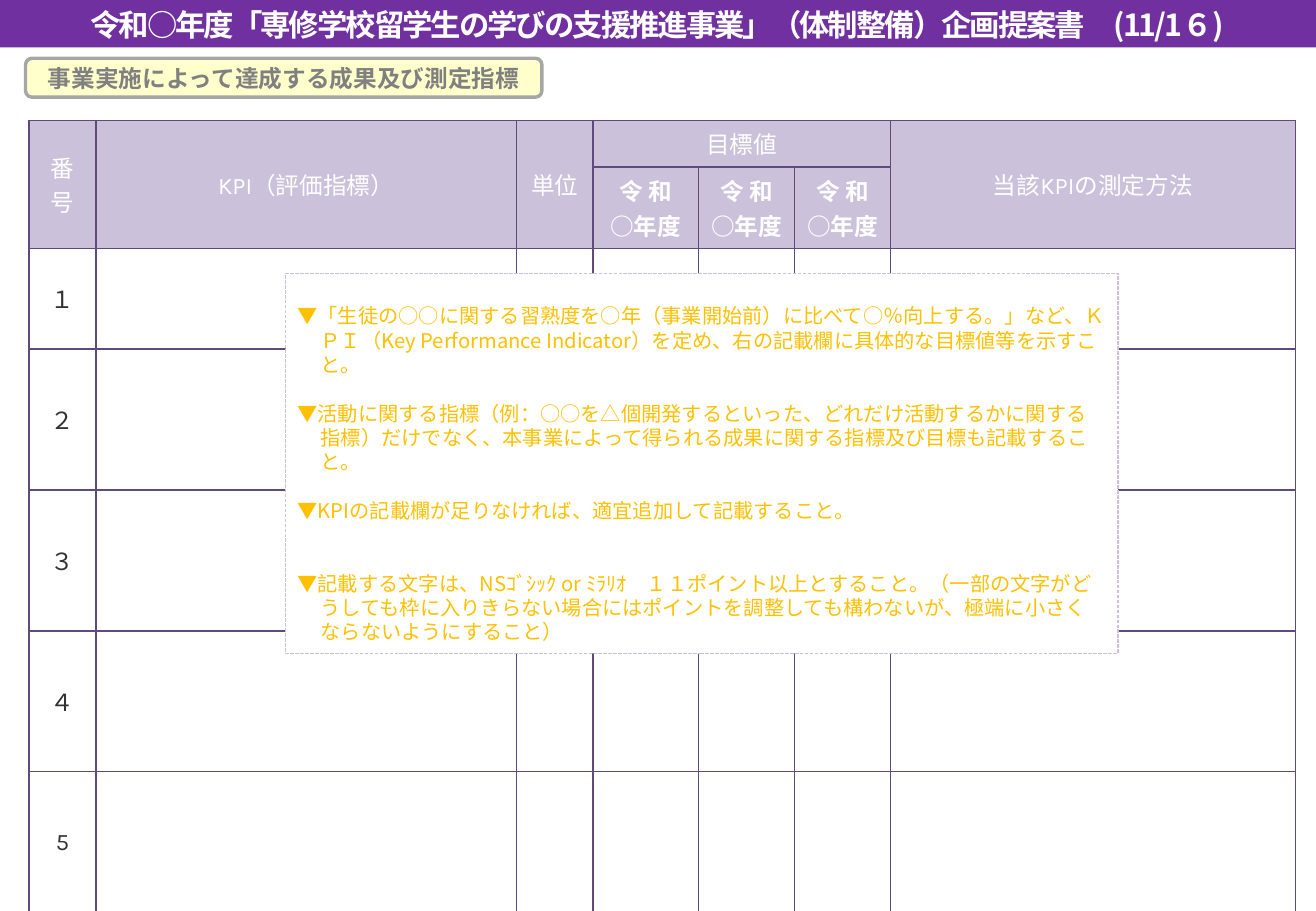
from pptx import Presentation
from pptx import oxml
from pptx import util as u
from pptx.dml.color import RGBColor
from pptx.enum import dml, shapes, text

NOTO = "Noto Sans CJK JP"
PURPLE, LILAC, EDGE, WHITE = "7030A0", "CCC1DA", "604A7B", "FFFFFF"
COLS = [0.55, 3.46, 0.63, 0.87, 0.79, 0.79, 3.33]
ROWS = [0.38, 0.67, 0.83] + [1.16] * 4
YEAR = "令 和\n○年度"
HEADS = {
    (0, 0): "番号", (0, 1): "KPI（評価指標）", (0, 2): "単位",
    (0, 3): "目標値", (0, 6): "当該KPIの測定方法",
    (1, 3): YEAR, (1, 4): YEAR, (1, 5): YEAR,
}
MERGES = [((0, c), (1, c)) for c in (0, 1, 2, 6)] + [((0, 3), (0, 5))]
NUMS = "１２３４5"
NOTES = [
    "▼「生徒の○○に関する習熟度を○年（事業開始前）に比べて○％向上する。」など、ＫＰＩ（Key Performance Indicator）を定め、右の記載欄に具体的な目標値等を示すこと。",
    "▼活動に関する指標（例：○○を△個開発するといった、どれだけ活動するかに関する指標）だけでなく、本事業によって得られる成果に関する指標及び目標も記載すること。",
    "▼KPIの記載欄が足りなければ、適宜追加して記載すること。",
    "▼記載する文字は、NSｺﾞｼｯｸ or ﾐﾗﾘｵ　１１ポイント以上とすること。（一部の文字がどうしても枠に入りきらない場合にはポイントを調整しても構わないが、極端に小さくならないようにすること）",
]
GAPS = [0, 14.4, 14.4, 28.8]


def rgb(code):
    return RGBColor.from_string(code)


def assign(item, vals):
    for key, val in vals.items():
        setattr(item, key, val)


class Page:
    def __init__(self, deck):
        self.slide = deck.slides.add_slide(deck.slide_layouts[5])
        self.items = self.slide.shapes

    def letter(self, frame, words, size, color, bold=False, name=NOTO,
               align=text.PP_ALIGN.CENTER):
        """Fill a text frame and style all its runs."""
        frame.text = words
        for para in frame.paragraphs:
            para.alignment = align
            for run in para.runs:
                assign(run.font, {"size": u.Pt(size), "bold": bold, "name": name})
                run.font.color.rgb = rgb(color)
                props = run._r.get_or_add_rPr()
                east = oxml.parse_xml(
                    f'<a:ea {oxml.ns.nsdecls("a")} typeface="{NOTO}"/>')
                props.find(oxml.ns.qn("a:latin")).addnext(east)

    def box(self, kind, place, fill, line=None, width=1):
        shape = self.items.add_shape(kind, *map(u.Inches, place))
        shape.shadow.inherit = False
        shape.fill.solid()
        shape.fill.fore_color.rgb = rgb(fill)
        if line:
            shape.line.color.rgb = rgb(line)
            shape.line.width = u.Pt(width)
        else:
            shape.line.fill.background()
        return shape

    def title(self, words, place):
        shape = self.items.title
        self.items._spTree.append(shape.element)
        sides = ("left", "top", "width", "height")
        assign(shape, dict(zip(sides, map(u.Inches, place))))
        frame = shape.text_frame
        self.letter(frame, words, 18, WHITE, True)
        assign(frame, {"word_wrap": False, "auto_size": text.MSO_AUTO_SIZE.NONE,
                       "vertical_anchor": text.MSO_ANCHOR.MIDDLE})
        frame.paragraphs[0].runs[0]._r.get_or_add_rPr().set("spc", "-120")

    def label(self, words, place):
        shape = self.box(shapes.MSO_SHAPE.ROUNDED_RECTANGLE, place,
                         "FFFFCC", "A6A6A6", 2)
        self.letter(shape.text_frame, words, 14, "808080", True)
        shape.text_frame.vertical_anchor = text.MSO_ANCHOR.MIDDLE

    def notes(self, place):
        shape = self.box(shapes.MSO_SHAPE.RECTANGLE, place, WHITE, LILAC, 0.75)
        shape.line.dash_style = dml.MSO_LINE.SQUARE_DOT
        frame = shape.text_frame
        assign(frame, {"word_wrap": True, "margin_top": u.Inches(0.25),
                       "vertical_anchor": text.MSO_ANCHOR.TOP})
        self.letter(frame, "\n".join(NOTES), 12, "FFC000",
                    align=text.PP_ALIGN.LEFT)
        for para, gap in zip(frame.paragraphs, GAPS):
            assign(para, {"line_spacing": u.Pt(14.4), "space_before": u.Pt(gap)})
            props = para._p.get_or_add_pPr()
            props.set("marL", str(u.Inches(0.19)))
            props.set("indent", str(u.Inches(-0.19)))

    def border(self, cell):
        props = cell._tc.get_or_add_tcPr()
        for side in "LRTB":
            props.append(oxml.parse_xml(
                f'<a:ln{side} {oxml.ns.nsdecls("a")} w="12700"><a:solidFill>'
                f'<a:srgbClr val="{EDGE}"/></a:solidFill></a:ln{side}>'))

    def table(self, left, top):
        frame = self.items.add_table(
            len(ROWS), len(COLS), u.Inches(left), u.Inches(top),
            u.Inches(sum(COLS)), u.Inches(sum(ROWS)))
        grid = frame.table
        assign(grid, {"first_row": False, "horz_banding": False})
        for col, width in zip(grid.columns, COLS):
            col.width = u.Inches(width)
        for row, height in zip(grid.rows, ROWS):
            row.height = u.Inches(height)
        for cell in grid.iter_cells():
            self.border(cell)
            cell.fill.background()
            cell.vertical_anchor = text.MSO_ANCHOR.MIDDLE
        for first, last in MERGES:
            grid.cell(*first).merge(grid.cell(*last))
        for (row, col), words in HEADS.items():
            cell = grid.cell(row, col)
            cell.fill.solid()
            cell.fill.fore_color.rgb = rgb(LILAC)
            self.letter(cell.text_frame, words, 14, WHITE, row == 1,
                        NOTO if row else "Karla")
        for row, num in enumerate(NUMS, 2):
            self.letter(grid.cell(row, 0).text_frame, num, 14, "323232",
                        name="Karla")


def main():
    deck = Presentation()
    assign(deck, {"slide_width": u.Inches(10.83), "slide_height": u.Inches(7.5)})
    page = Page(deck)
    page.table(0.24, 0.99)
    page.notes((2.35, 2.25, 6.85, 3.13))
    page.label("事業実施によって達成する成果及び測定指標", (0.21, 0.48, 4.25, 0.32))
    page.box(shapes.MSO_SHAPE.RECTANGLE, (0, 0, 10.83, 0.39), PURPLE)
    page.title("令和○年度「専修学校留学生の学びの支援推進事業」（体制整備）企画提案書　(11/1６)",
               (0.43, 0, 9.96, 0.4))
    deck.save("out.pptx")


if __name__ == "__main__":
    main()
